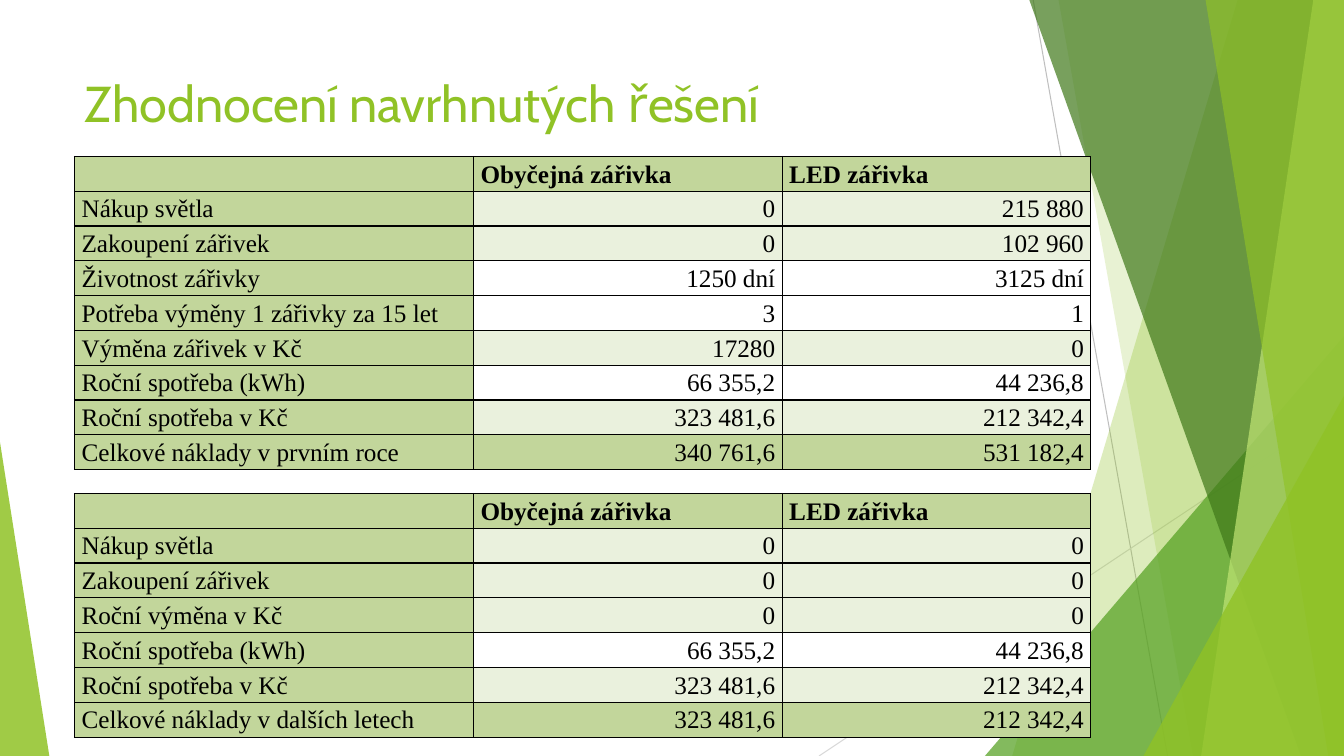
from lxml import etree
from pptx import Presentation
from pptx import util as u
from pptx.dml.color import RGBColor
from pptx.enum import shapes, text
from pptx.oxml import ns

PX = 9525
WIDE, HIGH = 1280, 720
HUES = {
    "lime": "90C226", "green": "54A021", "dark": "3F7819", "pale": "C0E474",
    "grey": "BFBFBF", "mist": "D9D9D9", "head": "C2D69B", "body": "EAF1DD",
    "plain": "FFFFFF", "ink": "000000",
}
COLS = (380, 294, 294)
ROW = 30
HEAD = ("", "Obyčejná zářivka", "LED zářivka", "head")
FIRST = [
    HEAD,
    ("Nákup světla", "0", "215 880", "body"),
    ("Zakoupení zářivek", "0", "102 960", "body"),
    ("Životnost zářivky", "1250 dní", "3125 dní", "plain"),
    ("Potřeba výměny 1 zářivky za 15 let", "3", "1", "plain"),
    ("Výměna zářivek v Kč", "17280", "0", "body"),
    ("Roční spotřeba (kWh)", "66 355,2", "44 236,8", "plain"),
    ("Roční spotřeba v Kč", "323 481,6", "212 342,4", "body"),
    ("Celkové náklady v prvním roce", "340 761,6", "531 182,4", "head"),
]
LATER = [
    HEAD,
    ("Nákup světla", "0", "0", "body"),
    ("Zakoupení zářivek", "0", "0", "body"),
    ("Roční výměna v Kč", "0", "0", "body"),
    ("Roční spotřeba (kWh)", "66 355,2", "44 236,8", "plain"),
    ("Roční spotřeba v Kč", "323 481,6", "212 342,4", "body"),
    ("Celkové náklady v dalších letech", "323 481,6", "212 342,4", "head"),
]


def px(*nums):
    return [u.Emu(n * PX) for n in nums]


def rgb(hue):
    return RGBColor.from_string(HUES[hue])


def tint(shape, hue, alpha):
    """Fill a shape with a see-through colour, alpha in percent."""
    shape.shadow.inherit = False
    shape.line.fill.background()
    shape.fill.solid()
    shape.fill.fore_color.rgb = rgb(hue)
    color = shape._element.spPr.find(".//" + ns.qn("a:srgbClr"))
    etree.SubElement(color, ns.qn("a:alpha"), val=str(alpha * 1000))


def add_line(slide, ends, hue):
    line = slide.shapes.add_connector(shapes.MSO_CONNECTOR.STRAIGHT, *px(*ends))
    line.line.color.rgb = rgb(hue)
    line.line.width = u.Pt(0.75)
    etree.SubElement(line._element.spPr, ns.qn("a:effectLst"))


def add_band(slide, top, foot, hue, alpha):
    """Slanted band that reaches from its left edge to the slide's right edge."""
    pen = slide.shapes.build_freeform(top, -1, scale=PX)
    pen.add_line_segments([(WIDE, -1), (WIDE, HIGH), (foot, HIGH)], close=True)
    tint(pen.convert_to_shape(), hue, alpha)


def add_wedge(slide, left, top, width, peak, hue, alpha):
    """Triangle that stands on the slide's bottom edge."""
    wedge = slide.shapes.add_shape(
        shapes.MSO_SHAPE.ISOSCELES_TRIANGLE, *px(left, top, width, HIGH - top))
    wedge.adjustments[0] = peak
    tint(wedge, hue, alpha)


def add_decor(slide):
    add_line(slide, (984, 0, 1112, HIGH), "grey")
    add_line(slide, (WIDE, 387, 780, HIGH), "mist")
    add_band(slide, 1179, 964, "lime", 30)
    add_band(slide, 1008, 1136, "lime", 20)
    add_wedge(slide, 938, 320, 342, 1, "green", 72)
    add_band(slide, 980, 1239, "dark", 70)
    add_band(slide, 1251, 1144, "pale", 70)
    add_band(slide, 1148, 1265, "lime", 65)
    add_wedge(slide, 1089, 377, 191, 1, "lime", 80)
    add_wedge(slide, 0, 421, 47, 0, "lime", 85)


def add_run(para, words, face, size, hue, bold=False):
    run = para.add_run()
    run.text = words
    run.font.name = face
    run.font.size = u.Pt(size)
    run.font.bold = bold
    run.font.color.rgb = rgb(hue)


def add_title(slide, box, words):
    frame = slide.shapes.add_textbox(*px(*box)).text_frame
    frame.word_wrap = True
    frame.vertical_anchor = text.MSO_ANCHOR.TOP
    add_run(frame.paragraphs[0], words, "Cabin", 36, "lime")


def add_edges(cell):
    props = cell._tc.get_or_add_tcPr()
    for side in "LRTB":
        edge = etree.SubElement(props, ns.qn("a:ln" + side), w=str(u.Pt(1)))
        fill = etree.SubElement(edge, ns.qn("a:solidFill"))
        etree.SubElement(fill, ns.qn("a:srgbClr"), val=HUES["ink"])


def fill_cell(cell, words, hue, bold, right):
    add_edges(cell)
    cell.fill.solid()
    cell.fill.fore_color.rgb = rgb(hue)
    cell.margin_left = cell.margin_right = u.Inches(0.07)
    cell.margin_top = cell.margin_bottom = 0
    if words:
        para = cell.text_frame.paragraphs[0]
        para.line_spacing = 1.15
        if right:
            para.alignment = text.PP_ALIGN.RIGHT
        add_run(para, words, "Times New Roman", 18, "ink", bold)


def add_costs(slide, left, top, rows):
    box = px(left, top, sum(COLS), ROW * len(rows))
    table = slide.shapes.add_table(len(rows), len(COLS), *box).table
    table.first_row = table.horz_banding = False
    for col, width in zip(table.columns, px(*COLS)):
        col.width = width
    for r, (*cells, hue) in enumerate(rows):
        table.rows[r].height = px(ROW)[0]
        for c, words in enumerate(cells):
            shade = hue if c else "head"
            fill_cell(table.cell(r, c), words, shade, r == 0, r > 0 and c > 0)


def main():
    deck = Presentation()
    deck.slide_width, deck.slide_height = px(WIDE, HIGH)
    slide = deck.slides.add_slide(deck.slide_layouts[6])
    add_decor(slide)
    add_title(slide, (71, 64, 902, 138), "Zhodnocení navrhnutých řešení")
    add_costs(slide, 71, 149, FIRST)
    add_costs(slide, 71, 470, LATER)
    deck.save("out.pptx")


if __name__ == "__main__":
    main()
